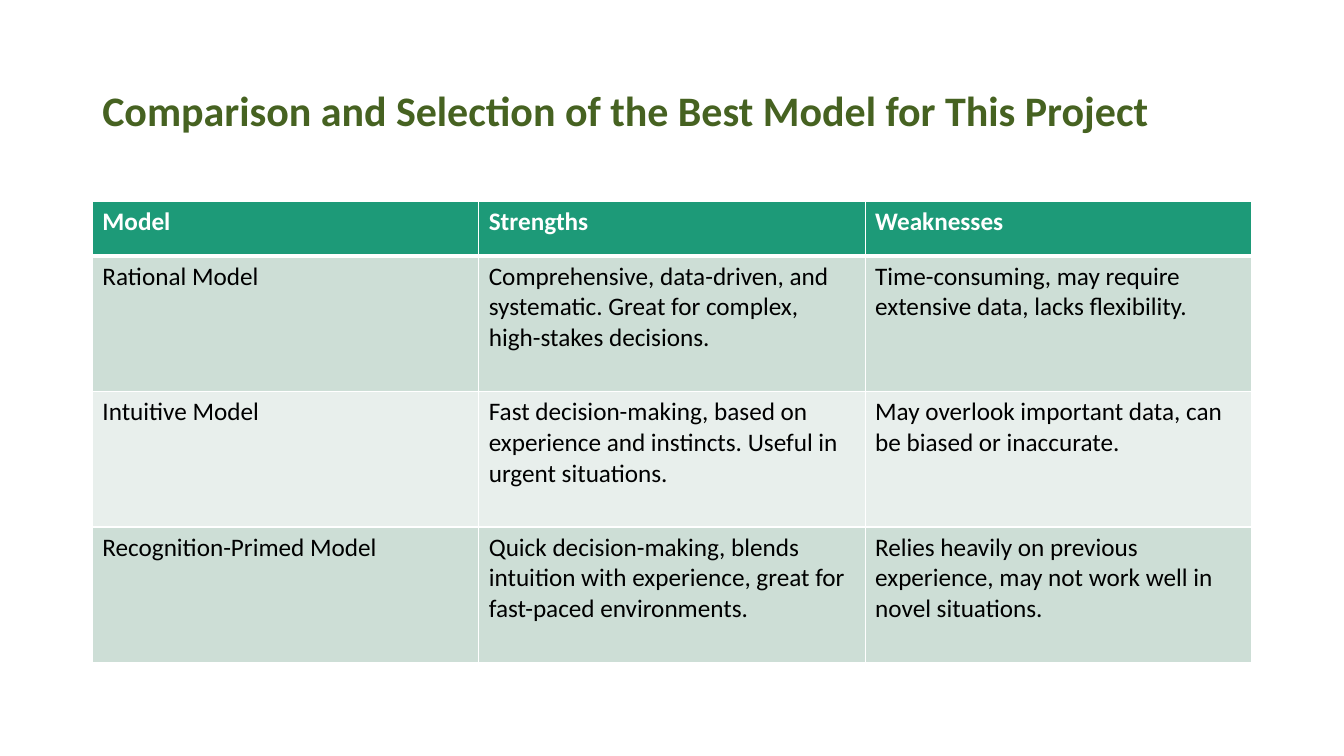
import pptx
import pptx.dml.color
import pptx.enum.text
import pptx.oxml
import pptx.oxml.ns
import pptx.util

PX = 9525  # EMU per px, 96 px to the inch
WHITE, BLACK = "FFFFFF", "000000"
TITLE_GREEN, HEADER_GREEN = "466221", "1D9A78"
BANDS = ("CDDED6", "E8EFEC")

TITLE = "Comparison and Selection of the Best Model for This Project"
MODELS = [
    ("Model", "Strengths", "Weaknesses"),
    ("Rational Model",
     "Comprehensive, data-driven, and systematic. Great for complex, high-stakes decisions.",
     "Time-consuming, may require extensive data, lacks flexibility."),
    ("Intuitive Model",
     "Fast decision-making, based on experience and instincts. Useful in urgent situations.",
     "May overlook important data, can be biased or inaccurate."),
    ("Recognition-Primed Model",
     "Quick decision-making, blends intuition with experience, great for fast-paced environments.",
     "Relies heavily on previous experience, may not work well in novel situations."),
]


def px(n):
    return pptx.util.Emu(n * PX)


def rgb(color):
    return pptx.dml.color.RGBColor.from_string(color)


class SlideBuilder:
    font = "Calibri"

    def __init__(self, slide):
        self.slide = slide

    def set_text(self, tf, text, size, color, bold):
        p = tf.paragraphs[0]
        p.text = text
        p.font.name = self.font
        p.font.size = pptx.util.Pt(size)
        p.font.bold = bold
        p.font.color.rgb = rgb(color)
        return p

    def title(self, text, x, y, w, h):
        tf = self.slide.shapes.add_textbox(px(x), px(y), px(w), px(h)).text_frame
        tf.word_wrap = True
        tf.vertical_anchor = pptx.enum.text.MSO_ANCHOR.MIDDLE
        p = self.set_text(tf, text, 30, TITLE_GREEN, True)
        p.line_spacing = 0.9

    def border(self, cell, side, points):
        ns = pptx.oxml.ns.nsdecls("a")
        cell._tc.get_or_add_tcPr().append(pptx.oxml.parse_xml(
            f'<a:ln{side} {ns} w="{pptx.util.Pt(points)}"><a:solidFill>'
            f'<a:srgbClr val="{WHITE}"/></a:solidFill></a:ln{side}>'))

    def table(self, rows, x, y, col_width, header_height, row_height):
        """Draw rows as a banded table whose first row is the header."""
        heights = [header_height] + [row_height] * (len(rows) - 1)
        cols = len(rows[0])
        table = self.slide.shapes.add_table(
            len(rows), cols, px(x), px(y), px(cols * col_width), px(sum(heights))).table
        for column in table.columns:
            column.width = px(col_width)
        for i, (texts, height) in enumerate(zip(rows, heights)):
            table.rows[i].height = px(height)
            header = i == 0
            for j, text in enumerate(texts):
                cell = table.cell(i, j)
                self.set_text(cell.text_frame, text, 18, WHITE if header else BLACK, header)
                for side in "LRTB":
                    thick = (i, side) in ((0, "B"), (1, "T"))
                    self.border(cell, side, 3 if thick else 1)
                cell.fill.solid()
                cell.fill.fore_color.rgb = rgb(HEADER_GREEN if header else BANDS[(i - 1) % 2])


def main():
    prs = pptx.Presentation()
    prs.slide_width, prs.slide_height = px(1280), px(720)
    s = SlideBuilder(prs.slides.add_slide(prs.slide_layouts[6]))
    s.title(TITLE, 88, 38, 1104, 139)
    s.table(MODELS, 88, 192, 368, 52, 129)
    prs.save("out.pptx")


if __name__ == "__main__":
    main()
